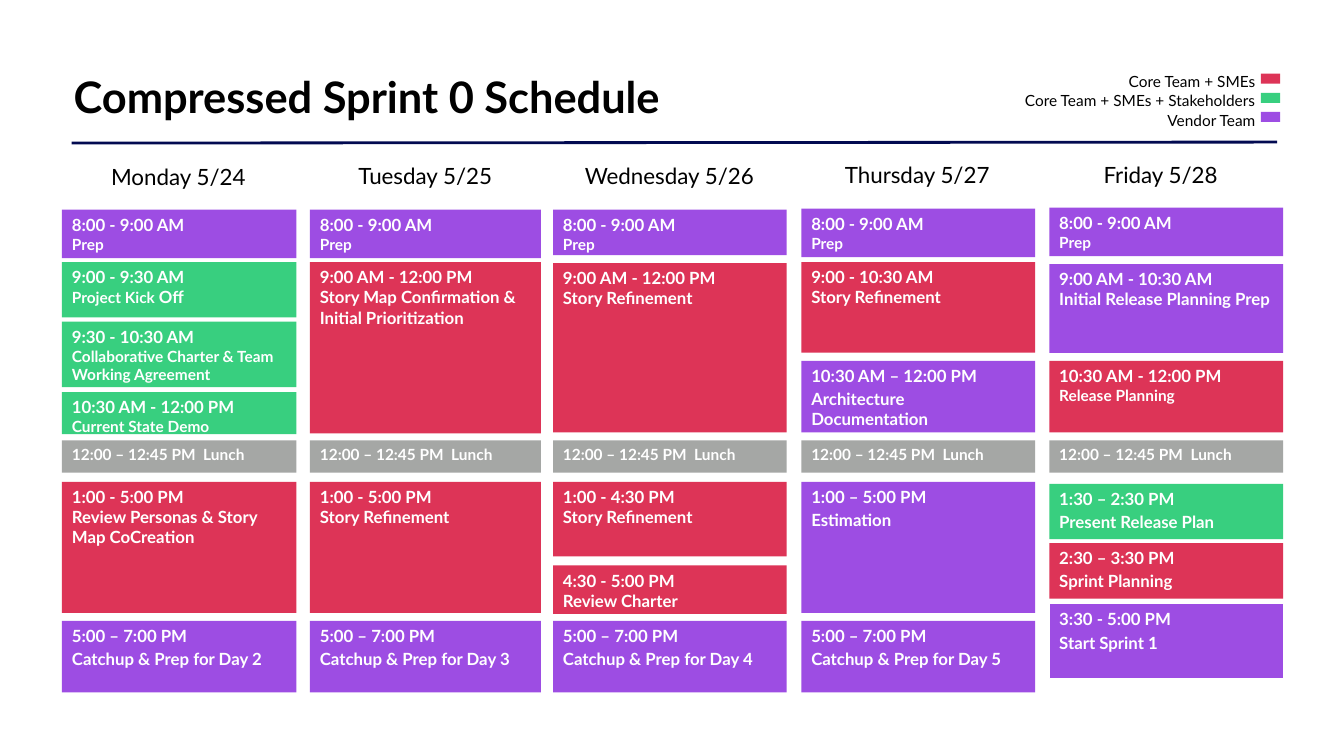
from pptx import Presentation
from pptx.dml.color import RGBColor
from pptx.enum.shapes import MSO_CONNECTOR, MSO_SHAPE
from pptx.enum.text import MSO_ANCHOR, MSO_AUTO_SIZE, PP_ALIGN
from pptx.oxml.ns import qn
from pptx.util import Pt
from lxml.etree import SubElement

# Content
COLORS = {"core": "DD3457", "stakeholders": "38CF7F", "vendor": "9D4DE3",
          "lunch": "A5A7A5", "rule": "020A51", "black": "000000", "white": "FFFFFF"}
FONT = "Lato"
TITLE = "Compressed Sprint 0 Schedule"
LEGEND = [("Core Team + SMEs", "core"),
          ("Core Team + SMEs + Stakeholders", "stakeholders"),
          ("Vendor Team", "vendor")]
LUNCH = "12:00 – 12:45 PM  Lunch"
PREP = ("8:00 - 9:00 AM", "Prep")
CATCHUP = ("5:00 – 7:00 PM", "Catchup & Prep for Day {}")

# Day: heading, heading left and top, column left, width, prep top and height
DAYS = [("Monday 5/24", 43.9, 113, 44.3, 167.4, 149.8, 34.6),
        ("Tuesday 5/25", 220.3, 112.3, 221.4, 165, 149.8, 34.6),
        ("Wednesday 5/26", 394.6, 112.3, 395, 167, 149.8, 32.4),
        ("Thursday 5/27", 571.7, 111.6, 572.4, 167, 149, 34.6),
        ("Friday 5/28", 745.5, 111.6, 749.5, 167, 148.3, 34.6)]

# Session: top, height, audience, time, topic, topic size, space before topic
SESSIONS = [
    [(187.2, 39.6, "stakeholders", "9:00 - 9:30 AM", "Project Kick Off", 11, 0),
     (229.7, 46.8, "stakeholders", "9:30 - 10:30 AM",
      "Collaborative Charter & Team Working Agreement", 11, 0),
     (280, 30.2, "stakeholders", "10:30 AM - 12:00 PM", "Current State Demo", 11, 0),
     (344.2, 93.6, "core", "1:00 - 5:00 PM", "Review Personas & Story Map CoCreation", 12, 0)],
    [(187.2, 122.4, "core", "9:00 AM - 12:00 PM",
      "Story Map Confirmation &\nInitial Prioritization", 12, 0),
     (344.2, 93.6, "core", "1:00 - 5:00 PM", "Story Refinement", 12, 0)],
    [(187.9, 121, "core", "9:00 AM - 12:00 PM", "Story Refinement", 12, 0),
     (344.2, 53.3, "core", "1:00 - 4:30 PM", "Story Refinement", 12, 0),
     (403.9, 34.6, "core", "4:30 - 5:00 PM", "Review Charter", 12, 0)],
    [(187.2, 64.8, "core", "9:00 - 10:30 AM", "Story Refinement", 12, 0),
     (257.8, 51.1, "vendor", "10:30 AM – 12:00 PM", "Architecture Documentation", 12, 1.8),
     (344.2, 93.6, "vendor", "1:00 – 5:00 PM", "Estimation", 12, 1.8)],
    [(188.6, 63.4, "vendor", "9:00 AM - 10:30 AM", "Initial Release Planning Prep", 12, 0),
     (257.8, 51.1, "core", "10:30 AM - 12:00 PM", "Release Planning", 11, 0),
     (345.6, 39.6, "stakeholders", "1:30 – 2:30 PM", "Present Release Plan", 12, 1.8),
     (388, 39.6, "core", "2:30 – 3:30 PM", "Sprint Planning", 12, 1.8),
     (431.3, 53.3, "vendor", "3:30 - 5:00 PM", "Start Sprint 1", 12, 2.4)],
]
LARGER_WORD = "Off"  # set one point larger than the rest of its topic

prs = Presentation()
prs.slide_width, prs.slide_height = Pt(960), Pt(540)
slide = prs.slides.add_slide(prs.slide_layouts[5])


def color(name):
    return RGBColor.from_string(COLORS[name])


def style(paragraph, size, color_name, bold=False, align=PP_ALIGN.LEFT):
    paragraph.alignment = align
    font = paragraph.font
    font.name, font.size, font.bold = FONT, Pt(size), bold
    font.color.rgb = color(color_name)


def add_label(text, left, top, width, height, size, align, inset):
    frame = slide.shapes.add_textbox(Pt(left), Pt(top), Pt(width), Pt(height)).text_frame
    frame.word_wrap = True
    frame.margin_left = frame.margin_right = Pt(inset)
    frame.text = text
    style(frame.paragraphs[0], size, "black", align=align)


def add_block(left, top, width, height, fill):
    block = slide.shapes.add_shape(MSO_SHAPE.RECTANGLE, Pt(left), Pt(top), Pt(width), Pt(height))
    block.shadow.inherit = False
    block.fill.solid()
    block.fill.fore_color.rgb = color(fill)
    block.line.fill.background()
    return block


def add_session(left, width, top, height, audience, time, topic="", topic_size=12, space=0):
    block = add_block(left, top, width, height, audience)
    frame = block.text_frame
    frame.word_wrap = True
    frame.vertical_anchor = MSO_ANCHOR.TOP
    frame.paragraphs[0].text = time
    style(frame.paragraphs[0], 12 if topic else 11, "white", True)
    for line in topic.splitlines():
        paragraph = frame.add_paragraph()
        if line.endswith(LARGER_WORD):
            paragraph.add_run().text = line.removesuffix(LARGER_WORD)
            larger = paragraph.add_run()
            larger.text = LARGER_WORD
            larger.font.size = Pt(topic_size + 1)
        else:
            paragraph.text = line
        style(paragraph, topic_size, "white", True)
        paragraph.space_before = Pt(space)
    return block


# Title
title = slide.shapes.title
title.left, title.top, title.width, title.height = Pt(43.2), Pt(43.2), Pt(643.7), Pt(50.4)
title_frame = title.text_frame
title_frame.text = TITLE
title_frame.auto_size = MSO_AUTO_SIZE.NONE
title_frame.vertical_anchor = MSO_ANCHOR.MIDDLE
title_frame.margin_left = title_frame.margin_right = Pt(9.4)
style(title_frame.paragraphs[0], 31, "black", True)

# Rule under the title
rule = slide.shapes.add_connector(MSO_CONNECTOR.STRAIGHT, Pt(51.1), Pt(102.2), Pt(912.2), Pt(101.5))
rule.line.color.rgb = color("rule")
rule.line.width = Pt(2)
SubElement(rule._element.spPr, qn("a:effectLst"))

# Legend
for row, (audience_name, audience) in enumerate(LEGEND):
    add_label(audience_name, 698.4, 47.7 + 14 * row, 202, 15, 11, PP_ALIGN.RIGHT, 3.6)
    add_block(900.7, 52.6 + 13.7 * row, 13.7, 7.2, audience)

# Day columns
for number, (day, sessions) in enumerate(zip(DAYS, SESSIONS), start=1):
    heading, heading_left, heading_top, left, width, prep_top, prep_height = day
    add_label(heading, heading_left, heading_top, 167, 28.8, 16, PP_ALIGN.CENTER, 7.2)
    add_session(left, width, prep_top, prep_height, "vendor", *PREP, 11)
    add_session(left, width, 314.6, 23, "lunch", LUNCH)
    if number < len(DAYS):
        time, topic = CATCHUP
        add_session(left, width, 443.5, 51.1, "vendor", time, topic.format(number + 1), 12, 1.8)
    for session in sessions:
        last_session = add_session(left, width, *session)

# White outline on the closing session
last_session.line.color.rgb = color("white")
last_session.line.width = Pt(0.75)

prs.save("out.pptx")
